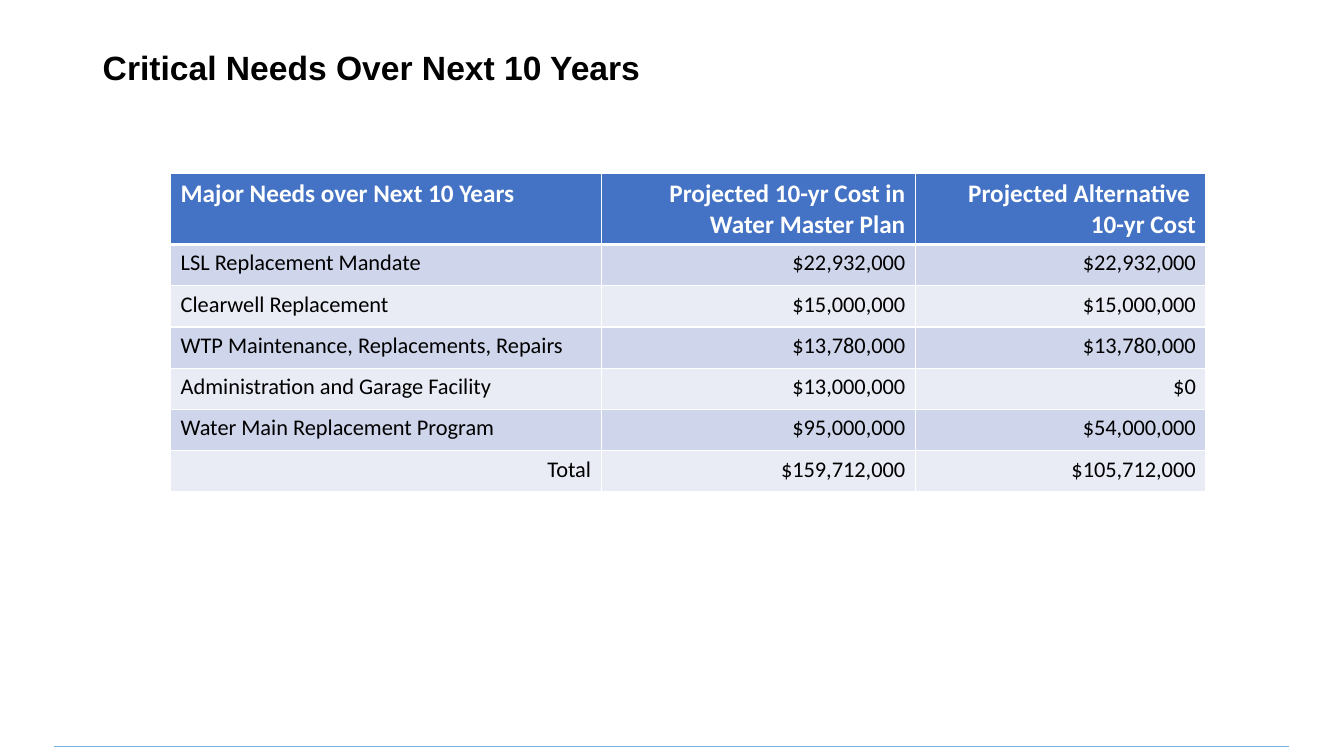
"""Build the slide on critical water system needs over the next ten years."""
from lxml import etree
from pptx import Presentation
from pptx.dml.color import RGBColor
from pptx.enum.shapes import MSO_CONNECTOR
from pptx.enum.text import MSO_ANCHOR, PP_ALIGN
from pptx.oxml.ns import qn
from pptx.util import Cm, Pt

STRAIGHT = MSO_CONNECTOR.STRAIGHT
MIDDLE = MSO_ANCHOR.MIDDLE
LEFT, RIGHT = PP_ALIGN.LEFT, PP_ALIGN.RIGHT

WHITE, BLACK = "FFFFFF", "000000"
HEADER_FILL = "4472C4"
BAND_FILLS = ("E9EBF5", "CFD5EA")
RULE_COLOR = "76B3E1"

COLUMN_WIDTHS = (10.85, 7.92, 7.32)
HEADER_HEIGHT, ROW_HEIGHT = 1.78, 1.04
NEEDS = (
    ("Major Needs over Next 10 Years", "Projected 10-yr Cost in Water Master Plan",
     "Projected Alternative \n10-yr Cost"),
    ("LSL Replacement Mandate", "$22,932,000", "$22,932,000"),
    ("Clearwell Replacement", "$15,000,000", "$15,000,000"),
    ("WTP Maintenance, Replacements, Repairs", "$13,780,000", "$13,780,000"),
    ("Administration and Garage Facility", "$13,000,000", "$0"),
    ("Water Main Replacement Program", "$95,000,000", "$54,000,000"),
    ("Total", "$159,712,000", "$105,712,000"),
)


def rgb(color):
    """Return the colour for a hex string."""
    return RGBColor.from_string(color)


def add_run(p, text, font, size, color, bold=False):
    """Add one formatted run to a paragraph."""
    r = p.add_run()
    r.text = text
    r.font.name = font
    r.font.size = Pt(size)
    r.font.bold = bold
    r.font.color.rgb = rgb(color)


def add_title(s, text):
    """Add the slide title."""
    tf = s.shapes.add_textbox(Cm(2.34), Cm(1.24), Cm(30.02), Cm(1.07)).text_frame
    tf.word_wrap = True
    tf.vertical_anchor = MIDDLE
    p = tf.paragraphs[0]
    p.line_spacing = 0.85
    add_run(p, text, "Arial", 24, BLACK, bold=True)


def add_footer_rule(s):
    """Add the thin line along the bottom of the slide."""
    line = s.shapes.add_connector(STRAIGHT, Cm(1.37), Cm(18.8), Cm(32.49), Cm(18.8))
    line.line.color.rgb = rgb(RULE_COLOR)
    line.line.width = Pt(0.5)
    etree.SubElement(line._element.spPr, qn("a:effectLst"))


def set_borders(cell, top, bottom):
    """Give a cell white borders, with the top and bottom widths in points."""
    tc_pr = cell._tc.get_or_add_tcPr()
    for side, width in (("L", 1), ("R", 1), ("T", top), ("B", bottom)):
        ln = etree.SubElement(tc_pr, qn(f"a:ln{side}"), w=str(Pt(width)))
        fill = etree.SubElement(ln, qn("a:solidFill"))
        etree.SubElement(fill, qn("a:srgbClr"), val=WHITE)


def fill_cell(cell, text, row, align):
    """Style a cell for its row and write its text."""
    header = row == 0
    set_borders(cell, 3 if row == 1 else 1, 3 if header else 1)
    cell.fill.solid()
    cell.fill.fore_color.rgb = rgb(HEADER_FILL if header else BAND_FILLS[row % 2])
    tf = cell.text_frame
    for i, line in enumerate(text.split("\n")):
        p = tf.add_paragraph() if i else tf.paragraphs[0]
        p.alignment = align
        add_run(p, line, "Calibri", 18 if header else 16,
                WHITE if header else BLACK, bold=header)


def add_needs_table(s):
    """Add the table of needs and projected costs."""
    height = HEADER_HEIGHT + ROW_HEIGHT * (len(NEEDS) - 1)
    table = s.shapes.add_table(len(NEEDS), len(COLUMN_WIDTHS), Cm(4.3), Cm(4.38),
                               Cm(sum(COLUMN_WIDTHS)), Cm(height)).table
    for column, width in zip(table.columns, COLUMN_WIDTHS):
        column.width = Cm(width)
    for row, texts in enumerate(NEEDS):
        table.rows[row].height = Cm(ROW_HEIGHT if row else HEADER_HEIGHT)
        for col, text in enumerate(texts):
            align = RIGHT if col or text == "Total" else LEFT
            fill_cell(table.cell(row, col), text, row, align)


def main():
    """Build and save the slide."""
    prs = Presentation()
    prs.slide_width, prs.slide_height = Cm(33.87), Cm(19.05)
    s = prs.slides.add_slide(prs.slide_layouts[6])
    add_footer_rule(s)
    add_title(s, "Critical Needs Over Next 10 Years")
    add_needs_table(s)
    prs.save("out.pptx")


if __name__ == "__main__":
    main()
